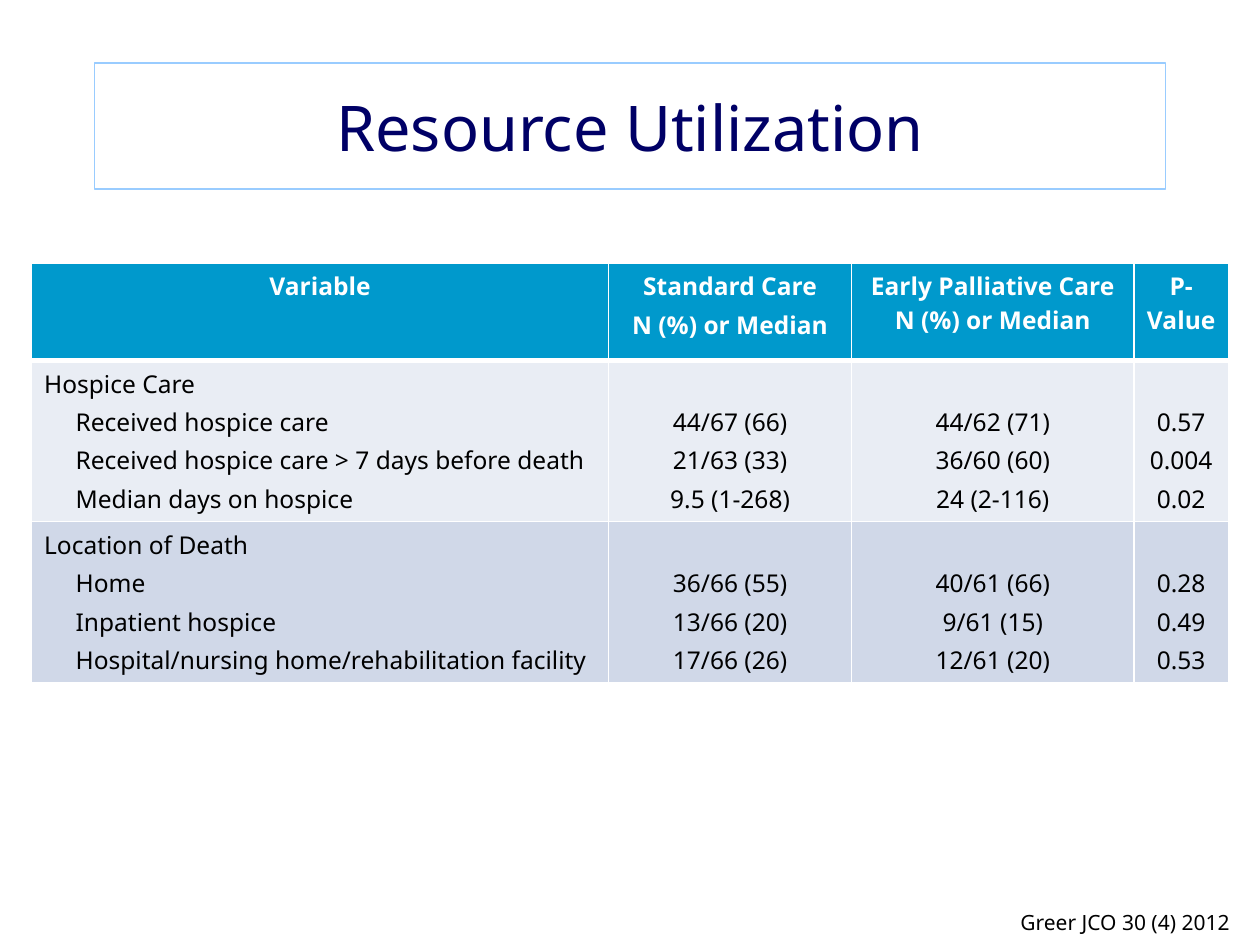
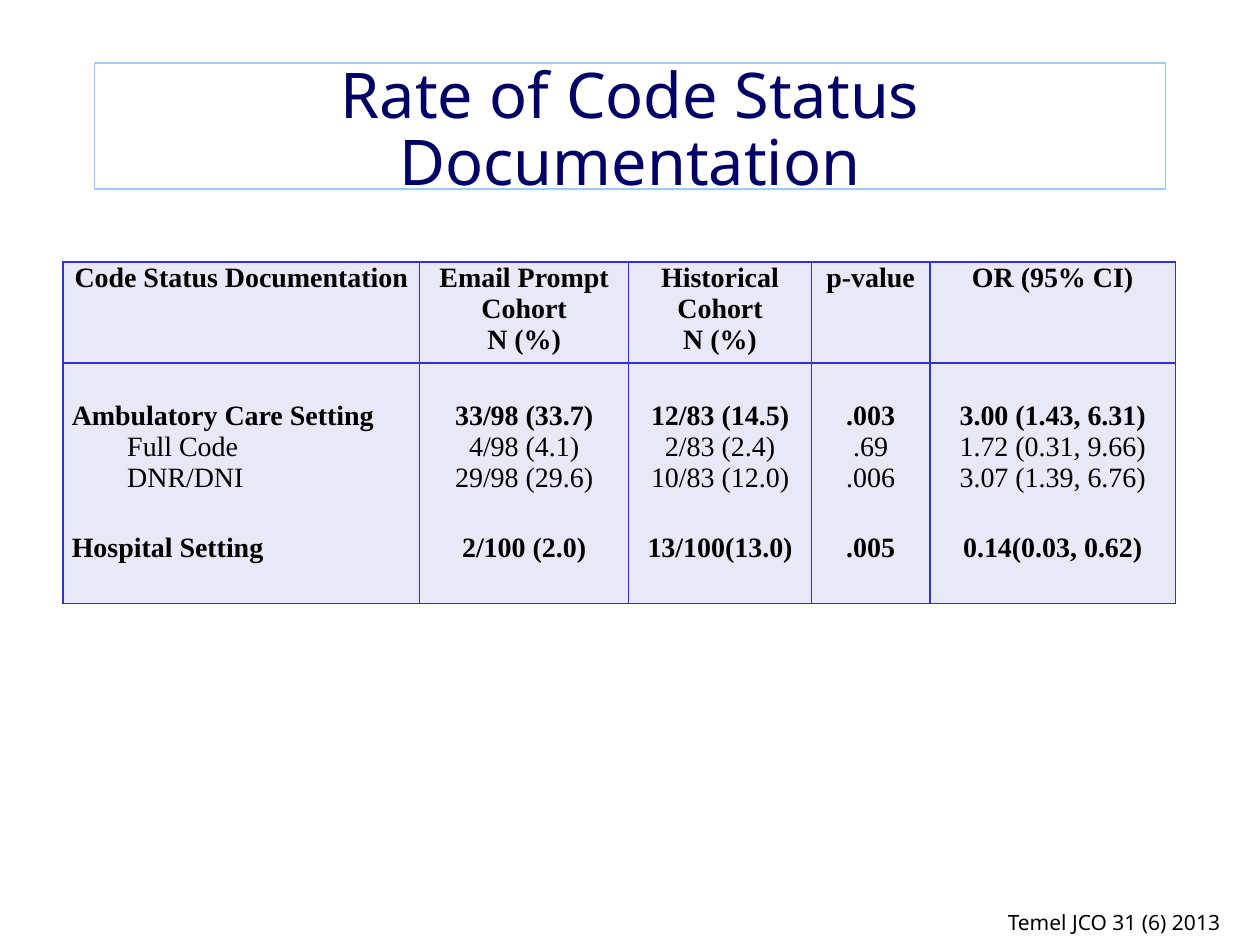
from dataclasses import dataclass, field

from lxml import etree
from pptx import Presentation
from pptx import util as u
from pptx.dml.color import RGBColor
from pptx.enum import shapes, text
from pptx.oxml.ns import qn

COLORS = {
    "white": "FFFFFF",
    "black": "000000",
    "title": "000066",
    "frame": "99CCFF",
    "header": "0099CC",
    "pale": "E9EDF4",
    "mist": "D0D8E8",
    "lavender": "E8E8F6",
    "grid": "3333CC",
}
SANS, SERIF = "Noto Sans", "Times New Roman"
COLUMNS, ROWS = 40, 30


@dataclass
class TableLook:
    font: str
    size: int
    header_color: str
    fills: list
    border: str
    header_rule: float
    side_inset: float
    edge_inset: float
    body_top_inset: float
    body_anchor: text.MSO_ANCHOR
    spacing: float
    indent: float
    indented: set
    bold: set = field(default_factory=set)
    gaps: dict = field(default_factory=dict)


RESOURCE_LOOK = TableLook(
    font=SANS, size=14, header_color="white", fills=["header", "pale", "mist"],
    border="white", header_rule=3, side_inset=0.1, edge_inset=0.05,
    body_top_inset=0.05, body_anchor=text.MSO_ANCHOR.BOTTOM, spacing=2.8,
    indent=0.25, indented={1, 2, 3},
)
CODE_STATUS_LOOK = TableLook(
    font=SERIF, size=16, header_color="black", fills=["lavender", "lavender"],
    border="grid", header_rule=1, side_inset=0.07, edge_inset=0,
    body_top_inset=0.3, body_anchor=text.MSO_ANCHOR.TOP, spacing=0,
    indent=0.44, indented={1, 2}, bold={0, 3}, gaps={3: 21.8},
)

RESOURCE_ROWS = [
    ["Variable", "Standard Care\nN (%) or Median",
     "Early Palliative Care N (%) or Median", "P-Value"],
    ["Hospice Care\nReceived hospice care\n"
     "Received hospice care > 7 days before death\nMedian days on hospice",
     "44/67 (66)\n21/63 (33)\n9.5 (1-268)",
     "44/62 (71)\n36/60 (60)\n24 (2-116)",
     "0.57\n0.004\n0.02"],
    ["Location of Death\nHome\nInpatient hospice\n"
     "Hospital/nursing home/rehabilitation facility",
     "36/66 (55)\n13/66 (20)\n17/66 (26)",
     "40/61 (66)\n9/61 (15)\n12/61 (20)",
     "0.28\n0.49\n0.53"],
]
CODE_STATUS_ROWS = [
    ["Code Status Documentation", "Email Prompt Cohort\nN (%)",
     "Historical\nCohort\nN (%)", "p-value", "OR (95% CI)"],
    ["Ambulatory Care Setting\nFull Code\nDNR/DNI\nHospital Setting",
     "33/98 (33.7)\n4/98 (4.1)\n29/98 (29.6)\n2/100 (2.0)",
     "12/83 (14.5)\n2/83 (2.4)\n10/83 (12.0)\n13/100(13.0)",
     ".003\n.69\n.006\n.005",
     "3.00 (1.43, 6.31)\n1.72 (0.31, 9.66)\n3.07 (1.39, 6.76)\n0.14(0.03, 0.62)"],
]


class Deck:
    def __init__(self):
        self.presentation = Presentation()
        self.presentation.slide_width = u.Inches(10)
        self.presentation.slide_height = u.Inches(7.5)
        self.slide = None

    def across(self, columns):
        return round(self.presentation.slide_width * columns / COLUMNS)

    def down(self, rows):
        return round(self.presentation.slide_height * rows / ROWS)

    def box(self, left, top, width, height):
        return self.across(left), self.down(top), self.across(width), self.down(height)

    def color(self, name):
        return RGBColor.from_string(COLORS[name])

    def new_slide(self):
        self.slide = self.presentation.slides.add_slide(self.presentation.slide_layouts[6])

    def format_runs(self, paragraph, font, size, color, bold=False):
        for run in paragraph.runs:
            run.font.name = font
            run.font.size = u.Pt(size)
            run.font.bold = bold
            run.font.color.rgb = self.color(color)

    def title(self, words, line_spacing=1.0, top_inset=0.05):
        shape = self.slide.shapes.add_shape(
            shapes.MSO_SHAPE.RECTANGLE, *self.box(3, 2, 34, 4))
        shape.shadow.inherit = False
        shape.fill.background()
        shape.line.color.rgb = self.color("frame")
        shape.line.width = u.Pt(0.75)
        frame = shape.text_frame
        frame.word_wrap = True
        frame.margin_top = u.Inches(top_inset)
        frame.vertical_anchor = text.MSO_ANCHOR.MIDDLE
        frame.text = words
        paragraph = frame.paragraphs[0]
        paragraph.alignment = text.PP_ALIGN.CENTER
        paragraph.line_spacing = line_spacing
        self.format_runs(paragraph, SANS, 36, "title")

    def citation(self, words, left):
        shape = self.slide.shapes.add_textbox(*self.box(left, 28.68, COLUMNS - left, 1.2))
        shape.text_frame.word_wrap = True
        shape.text_frame.text = words
        self.format_runs(shape.text_frame.paragraphs[0], SANS, 12, "black")

    def borders(self, cell, look, row):
        widths = {
            "a:lnL": 1,
            "a:lnR": 1,
            "a:lnT": look.header_rule if row == 1 else 1,
            "a:lnB": look.header_rule if row == 0 else 1,
        }
        properties = cell._tc.get_or_add_tcPr()
        for position, (tag, width) in enumerate(widths.items()):
            line = etree.Element(qn(tag), w=str(u.Pt(width)))
            fill = etree.SubElement(line, qn("a:solidFill"))
            etree.SubElement(fill, qn("a:srgbClr"), val=COLORS[look.border])
            properties.insert(position, line)

    def cell(self, cell, words, look, row, column):
        header = row == 0
        label = column == 0 and not header
        cell.fill.solid()
        cell.fill.fore_color.rgb = self.color(look.fills[row])
        self.borders(cell, look, row)
        cell.margin_left = cell.margin_right = u.Inches(look.side_inset)
        cell.margin_top = u.Inches(look.edge_inset if header else look.body_top_inset)
        cell.margin_bottom = u.Inches(look.edge_inset)
        cell.vertical_anchor = text.MSO_ANCHOR.TOP if header else look.body_anchor
        cell.text_frame.text = words
        for index, paragraph in enumerate(cell.text_frame.paragraphs):
            paragraph.alignment = text.PP_ALIGN.LEFT if label else text.PP_ALIGN.CENTER
            if index:
                gap = look.spacing if header else look.gaps.get(index, look.spacing)
                paragraph.space_before = u.Pt(gap)
            if label and index in look.indented:
                paragraph._p.get_or_add_pPr().set("marL", str(u.Inches(look.indent)))
            self.format_runs(paragraph, look.font, look.size,
                             look.header_color if header else "black",
                             header or index in look.bold)

    def table(self, left, top, widths, heights, rows, look):
        table = self.slide.shapes.add_table(
            len(heights), len(widths),
            *self.box(left, top, sum(widths), sum(heights))).table
        table.first_row = table.horz_banding = False
        for column, width in zip(table.columns, widths):
            column.width = self.across(width)
        for row, height in zip(table.rows, heights):
            row.height = self.down(height)
        for row, entries in enumerate(rows):
            for column, words in enumerate(entries):
                self.cell(table.cell(row, column), words, look, row, column)


def main():
    deck = Deck()

    deck.new_slide()
    deck.title("Resource Utilization")
    deck.table(1, 8.36, [18.32, 7.72, 8.96, 3], [3.08, 5.12, 5.12],
               RESOURCE_ROWS, RESOURCE_LOOK)
    deck.citation("Greer JCO 30 (4) 2012", 32)

    deck.new_slide()
    deck.title("Rate of Code Status Documentation", line_spacing=0.89, top_inset=0.14)
    deck.table(2, 8.32, [11.32, 6.64, 5.8, 3.76, 7.8], [2.96, 7.64],
               CODE_STATUS_ROWS, CODE_STATUS_LOOK)
    deck.citation("Temel JCO 31 (6) 2013", 31.6)

    deck.presentation.save("out.pptx")


if __name__ == "__main__":
    main()
